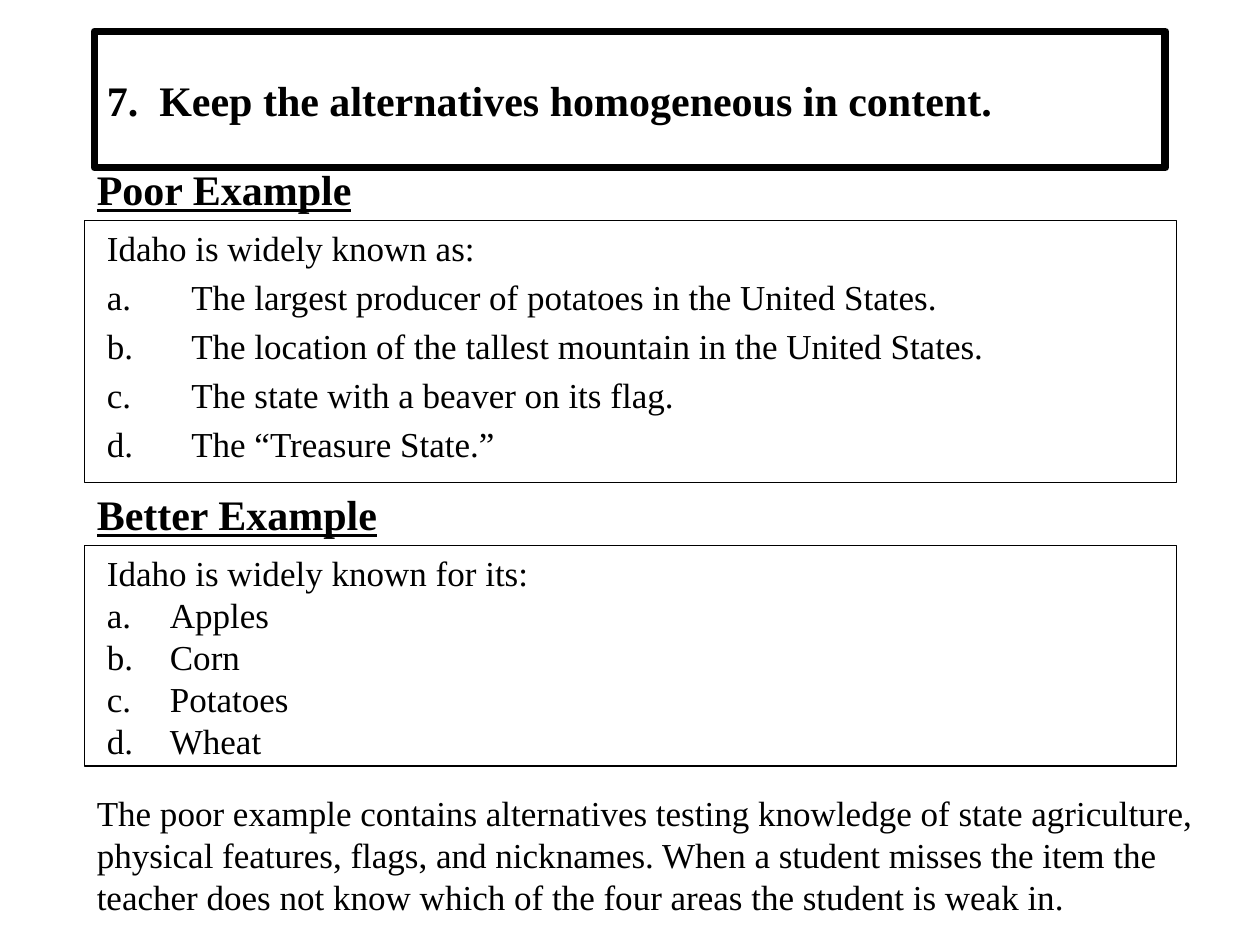
from lxml import etree
from pptx import Presentation
from pptx.dml.color import RGBColor
from pptx.enum.shapes import MSO_SHAPE
from pptx.enum.text import MSO_ANCHOR
from pptx.oxml.ns import qn
from pptx.util import Inches, Pt

BLACK = RGBColor(0, 0, 0)
RECT = MSO_SHAPE.RECTANGLE
MIDDLE = MSO_ANCHOR.MIDDLE
TOP = MSO_ANCHOR.TOP
BODY = {"name": "Times New Roman", "size": Pt(20)}
TITLE = {"name": "Times New Roman", "size": Pt(24), "bold": True}
HEAD = {**TITLE, "underline": True}


def add_frame(slide, box, width):
    frame = slide.shapes.add_shape(RECT, *map(Inches, box))
    frame.shadow.inherit = False
    frame.fill.background()
    frame.line.color.rgb = BLACK
    frame.line.width = Pt(width)
    return frame


def add_text(slide, box, lines, style, anchor=TOP, wrap=True, gap=0):
    frame = slide.shapes.add_textbox(*map(Inches, box)).text_frame
    frame.word_wrap = wrap
    frame.vertical_anchor = anchor
    for i, line in enumerate(lines):
        para = frame.paragraphs[0] if i == 0 else frame.add_paragraph()
        para.space_before = Pt(gap if i else 0)
        run = para.add_run()
        run.text = line
        run.font.color.rgb = BLACK
        for key, value in style.items():
            setattr(run.font, key, value)
    return frame


def number_items(frame, indent):
    for i, para in enumerate(frame.paragraphs):
        props = para._p.get_or_add_pPr()
        props.set("marL", str(Inches(indent)))
        props.set("indent", str(-Inches(indent)))
        if i:
            etree.SubElement(props, qn("a:buAutoNum"), type="alphaLcPeriod")


def add_title(slide, box, text):
    add_frame(slide, box, 4.5)
    add_text(slide, box, [text], TITLE, MIDDLE)


def add_example(slide, box, head, lines, indent, gap):
    left, top, width, height = box
    add_text(slide, (left, top - 0.5, 2.5, 0.5), [head], HEAD, wrap=False)
    add_frame(slide, box, 0.75)
    inner = (left + 0.08, top, width - 0.17, height)
    number_items(add_text(slide, inner, lines, BODY, gap=gap), indent)


def add_note(slide, box, text):
    add_text(slide, box, [text], BODY)


def main():
    deck = Presentation()
    deck.slide_width, deck.slide_height = Inches(10), Inches(7.5)
    slide = deck.slides.add_slide(deck.slide_layouts[6])
    add_title(slide, (0.75, 0.25, 8.5, 1.08),
              "7.  Keep the alternatives homogeneous in content.")
    add_example(slide, (0.67, 1.75, 8.67, 2.08), "Poor Example", [
        "Idaho is widely known as:",
        "The largest producer of potatoes in the United States.",
        "The location of the tallest mountain in the United States.",
        "The state with a beaver on its flag.",
        "The “Treasure State.”",
    ], 0.67, 4)
    add_example(slide, (0.67, 4.33, 8.67, 1.75), "Better Example", [
        "Idaho is widely known for its:",
        "Apples", "Corn", "Potatoes", "Wheat",
    ], 0.5, 0)
    add_note(slide, (0.67, 6.23, 9, 1.1),
             "The poor example contains alternatives testing knowledge of "
             "state agriculture, physical features, flags, and nicknames. "
             "When a student misses the item the teacher does not know "
             "which of the four areas the student is weak in.")
    deck.save("out.pptx")


if __name__ == "__main__":
    main()
